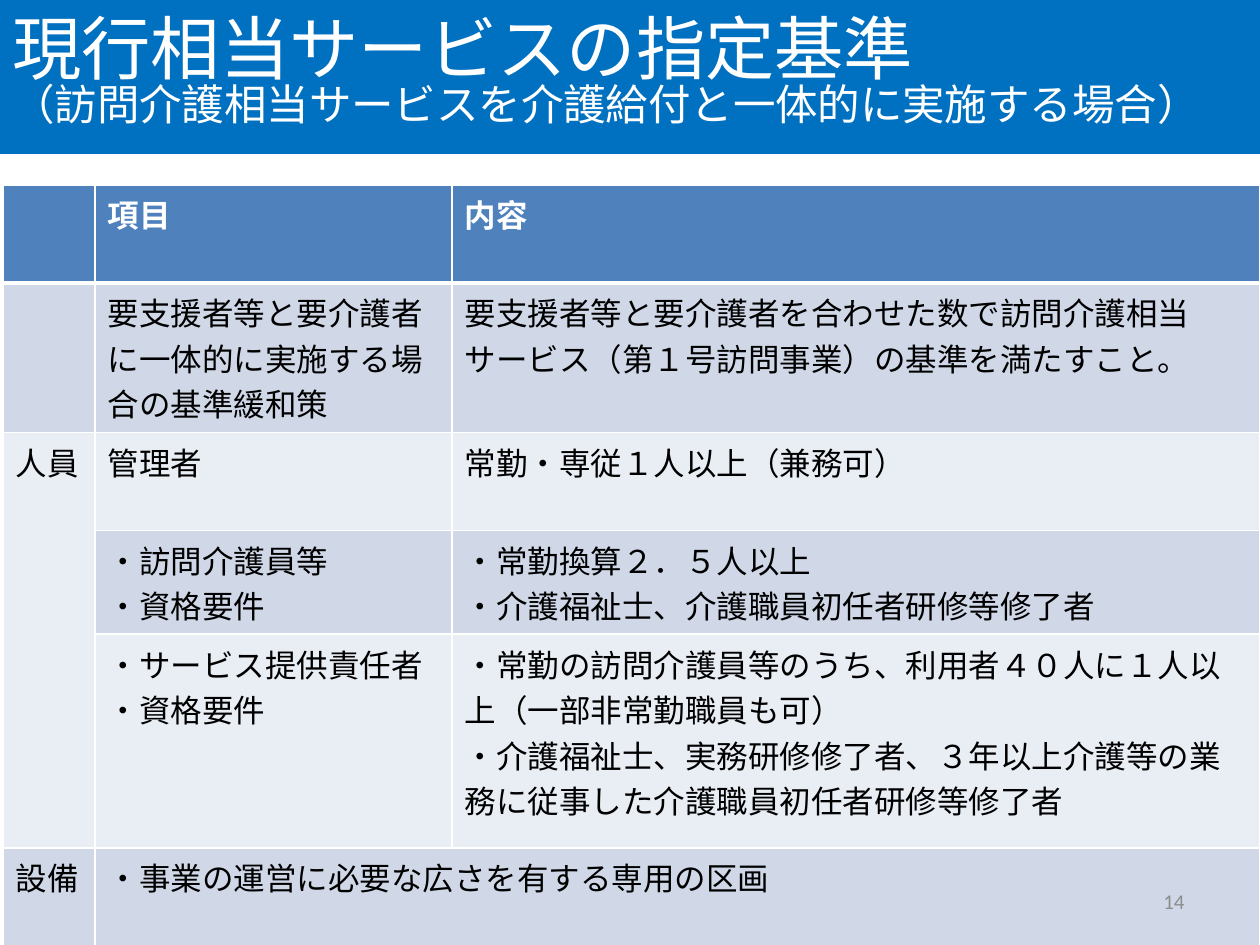
"""Builds the slide on designation standards for home-visit care services."""
from dataclasses import dataclass

import lxml.etree
import pptx
import pptx.dml.color
import pptx.enum.shapes
import pptx.enum.text
import pptx.oxml.ns
import pptx.util

PX = 914400 // 126


@dataclass(frozen=True)
class Theme:
    font: str = "Calibri"
    banner: str = "0070C0"
    head: str = "4F81BD"
    bands: tuple = ("D0D8E8", "E9EDF4")
    white: str = "FFFFFF"
    black: str = "000000"
    grey: str = "8C8C8C"
    title: float = 39.6
    subtitle: float = 24.3
    body: float = 18
    number: float = 12


class Deck:
    def __init__(self, theme, width, height):
        self.theme = theme
        self.prs = pptx.Presentation()
        self.prs.slide_width, self.prs.slide_height = width * PX, height * PX
        self.s = self.prs.slides.add_slide(self.prs.slide_layouts[6])

    def color(self, value):
        return pptx.dml.color.RGBColor.from_string(value)

    def fill(self, obj, value):
        obj.fill.solid()
        obj.fill.fore_color.rgb = self.color(value)

    def style(self, r, size, color, bold=False):
        r.font.name, r.font.size, r.font.bold = self.theme.font, pptx.util.Pt(size), bold
        r.font.color.rgb = self.color(color)

    def banner(self, box, title, subtitle):
        t = self.theme
        sp = self.s.shapes.add_shape(pptx.enum.shapes.MSO_SHAPE.RECTANGLE, *(v * PX for v in box))
        sp.shadow.inherit = False
        self.fill(sp, t.banner)
        sp.line.fill.background()
        tf = sp.text_frame
        tf.word_wrap = True
        tf.vertical_anchor = pptx.enum.text.MSO_ANCHOR.MIDDLE
        p = tf.paragraphs[0]
        p.text = f"{title}\v{subtitle}"
        p.alignment = pptx.enum.text.PP_ALIGN.LEFT
        p.line_spacing = 0.8
        for r, size in zip(p.runs, (t.title, t.subtitle)):
            self.style(r, size, t.white)

    def borders(self, cell, bottom):
        tcPr = cell._tc.get_or_add_tcPr()
        qn = pptx.oxml.ns.qn
        for i, (side, width) in enumerate((("L", 1), ("R", 1), ("T", 1), ("B", bottom))):
            ln = lxml.etree.Element(qn(f"a:ln{side}"), w=str(pptx.util.Pt(width)))
            solid = lxml.etree.SubElement(ln, qn("a:solidFill"))
            lxml.etree.SubElement(solid, qn("a:srgbClr"), val=self.theme.white)
            tcPr.insert(i, ln)

    def table(self, left, top, widths, heights, rows, merges):
        t = self.theme
        size = (len(rows), len(widths))
        box = (left, top, sum(widths), sum(heights))
        tbl = self.s.shapes.add_table(*size, *(v * PX for v in box)).table
        for col, w in zip(tbl.columns, widths):
            col.width = w * PX
        for i, (row, h) in enumerate(zip(rows, heights)):
            tbl.rows[i].height = h * PX
            for j, text in enumerate(row):
                cell = tbl.cell(i, j)
                self.fill(cell, t.bands[(i - 1) % 2] if i else t.head)
                self.borders(cell, 1 if i else 3)
                cell.text_frame.text = text
                for p in cell.text_frame.paragraphs:
                    for r in p.runs:
                        self.style(r, t.body, t.black if i else t.white, not i)
        for first, last in merges:
            tbl.cell(*first).merge(tbl.cell(*last))

    def number(self, box, text):
        tf = self.s.shapes.add_textbox(*(v * PX for v in box)).text_frame
        tf.word_wrap = True
        tf.vertical_anchor = pptx.enum.text.MSO_ANCHOR.MIDDLE
        p = tf.paragraphs[0]
        p.text = text
        p.alignment = pptx.enum.text.PP_ALIGN.RIGHT
        self.style(p.runs[0], self.theme.number, self.theme.grey)


STANDARDS = [
    ("", "項目", "内容"),
    ("", "要支援者等と要介護者に一体的に実施する場合の基準緩和策",
     "要支援者等と要介護者を合わせた数で訪問介護相当サービス（第１号訪問事業）の基準を満たすこと。"),
    ("人員", "管理者", "常勤・専従１人以上（兼務可）"),
    ("", "・訪問介護員等\n・資格要件",
     "・常勤換算２．５人以上\n・介護福祉士、介護職員初任者研修等修了者"),
    ("", "・サービス提供責任者\n・資格要件",
     "・常勤の訪問介護員等のうち、利用者４０人に１人以上（一部非常勤職員も可）\n"
     "・介護福祉士、実務研修修了者、３年以上介護等の業務に従事した介護職員初任者研修等修了者"),
    ("設備", "・事業の運営に必要な広さを有する専用の区画", ""),
]


def main():
    deck = Deck(Theme(), 1260, 945)
    deck.banner((0, -4, 1260, 158), "現行相当サービスの指定基準",
                "（訪問介護相当サービスを介護給付と一体的に実施する場合）")
    deck.table(3, 185, (92, 357, 808), (98, 130, 98, 103, 214, 98), STANDARDS,
               [((2, 0), (4, 0)), ((5, 1), (5, 2))])
    deck.number((903, 876, 294, 50), "14")
    deck.prs.save("out.pptx")


if __name__ == "__main__":
    main()
